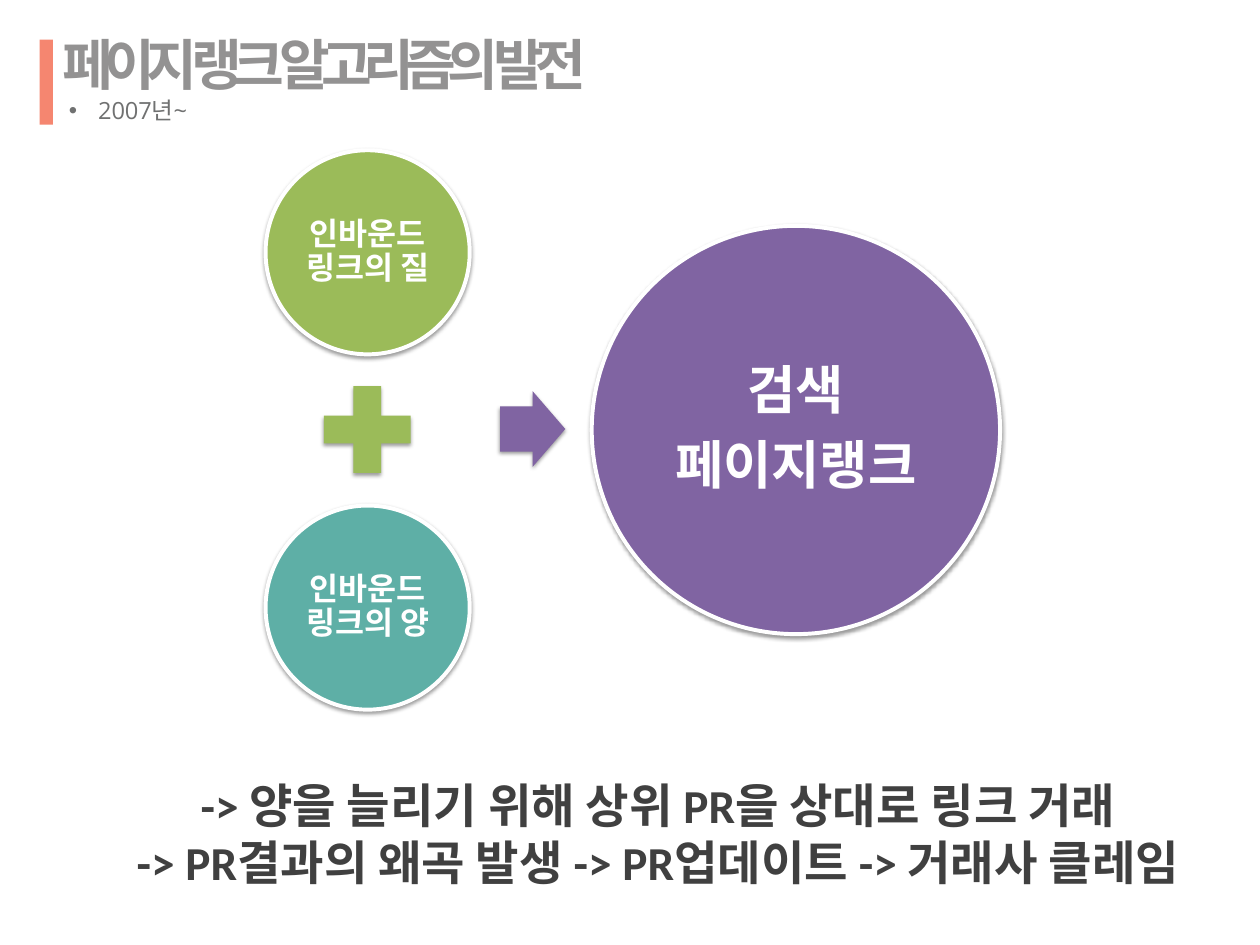
from lxml import etree
from pptx import Presentation
from pptx.dml.color import RGBColor
from pptx.enum.shapes import MSO_SHAPE as SHAPE
from pptx.enum.text import MSO_ANCHOR as ANCHOR, PP_ALIGN as ALIGN
from pptx.oxml import parse_xml
from pptx.oxml.ns import nsdecls, qn
from pptx.util import Inches, Pt

COLORS = {
    "coral": "F58670", "title": "939292", "subtitle": "707171",
    "green": "9BBB59", "teal": "5EAFA6", "purple": "8064A2",
    "white": "FFFFFF", "dark": "404040",
}


def add_paragraph(tf, text, size, color, font="Calibri", bold=True, align=ALIGN.CENTER,
                  line_spacing=None, space_after=None, tracking=None):
    """Fill the empty first paragraph of tf, or append one after it."""
    p = tf.paragraphs[0] if not tf.text else tf.add_paragraph()
    p.alignment, p.line_spacing, p.space_after = align, line_spacing, space_after
    r = p.add_run()
    r.text = text
    r.font.size, r.font.bold, r.font.name = Pt(size), bold, font
    r.font.color.rgb = RGBColor.from_string(COLORS[color])
    if tracking is not None:
        r.font._element.set("spc", str(round(tracking * 100)))
    return p


def add_figure(kind, left, top, width, height, color, outlined=False, shadow=True):
    sp = s.shapes.add_shape(kind, Inches(left), Inches(top), Inches(width), Inches(height))
    sp.shadow.inherit = False
    sp.fill.solid()
    sp.fill.fore_color.rgb = RGBColor.from_string(COLORS[color])
    if outlined:
        sp.line.color.rgb = RGBColor.from_string(COLORS["white"])
        sp.line.width = Pt(3)
    else:
        sp.line.fill.background()
    if shadow:
        sp._element.spPr.find(qn("a:effectLst")).append(parse_xml(
            f'<a:outerShdw {nsdecls("a")} blurRad="{Pt(3.1)}" dist="{Pt(1.6)}" dir="5400000" '
            'rotWithShape="0"><a:srgbClr val="000000"><a:alpha val="38000"/></a:srgbClr>'
            '</a:outerShdw>'))
    return sp


prs = Presentation()
prs.slide_width, prs.slide_height = Inches(13.33), Inches(10)
s = prs.slides.add_slide(prs.slide_layouts[6])

# Heading
add_figure(SHAPE.RECTANGLE, 0.42, 0.42, 0.14, 0.9, "coral", shadow=False)
tf = s.shapes.add_textbox(Inches(0.66), Inches(0.34), Inches(8.76), Inches(0.98)).text_frame
tf.word_wrap = True
tf.margin_left = tf.margin_right = tf.margin_top = tf.margin_bottom = 0
add_paragraph(tf, "페이지 랭크 알고리즘의 발전", 42, "title", font="Arial", align=ALIGN.LEFT,
              line_spacing=Pt(49.4), tracking=-6.7)
p = add_paragraph(tf, "2007년~", 18, "subtitle", font="Open Sans", bold=False,
                  align=ALIGN.LEFT, line_spacing=Pt(20.6), tracking=-0.1)
pPr = p._p.get_or_add_pPr()
pPr.set("marL", str(Inches(0.38)))
pPr.set("indent", str(Inches(-0.31)))
etree.SubElement(pPr, qn("a:buFont")).set("typeface", "Arial")
etree.SubElement(pPr, qn("a:buChar")).set("char", "•")

# Two inputs lead to one result
add_figure(SHAPE.MATH_PLUS, 3.26, 3.92, 1.25, 1.25, "green")
arrow = add_figure(SHAPE.RIGHT_ARROW, 5.29, 4.14, 0.69, 0.8, "purple")
arrow.adjustments[0], arrow.adjustments[1] = 0.6, 0.5

circles = [
    (2.81, 1.59, 2.16, "green", 24, 0.03, ["인바운드링크의 질"]),
    (2.81, 5.35, 2.16, "teal", 24, 0.03, ["인바운드링크의 양"]),
    (6.26, 2.39, 4.32, "purple", 40, 0.06, ["검색", "페이지랭크"]),
]
for left, top, diameter, color, size, margin, lines in circles:
    sp = add_figure(SHAPE.OVAL, left, top, diameter, diameter, color, outlined=True)
    tf = sp.text_frame
    tf.word_wrap, tf.vertical_anchor = True, ANCHOR.MIDDLE
    tf.margin_left = tf.margin_right = tf.margin_top = tf.margin_bottom = Inches(margin)
    for line in lines:
        add_paragraph(tf, line, size, "white", line_spacing=0.9, space_after=Pt(size * 0.35))

# Consequences
tf = s.shapes.add_textbox(Inches(0.95), Inches(8.17), Inches(12.02), Inches(1.31)).text_frame
tf.word_wrap = False
for line in ["-> 양을 늘리기 위해 상위 PR을 상대로 링크 거래",
             "-> PR결과의 왜곡 발생 -> PR업데이트 -> 거래사 클레임"]:
    add_paragraph(tf, line, 36, "dark")

prs.save("out.pptx")
